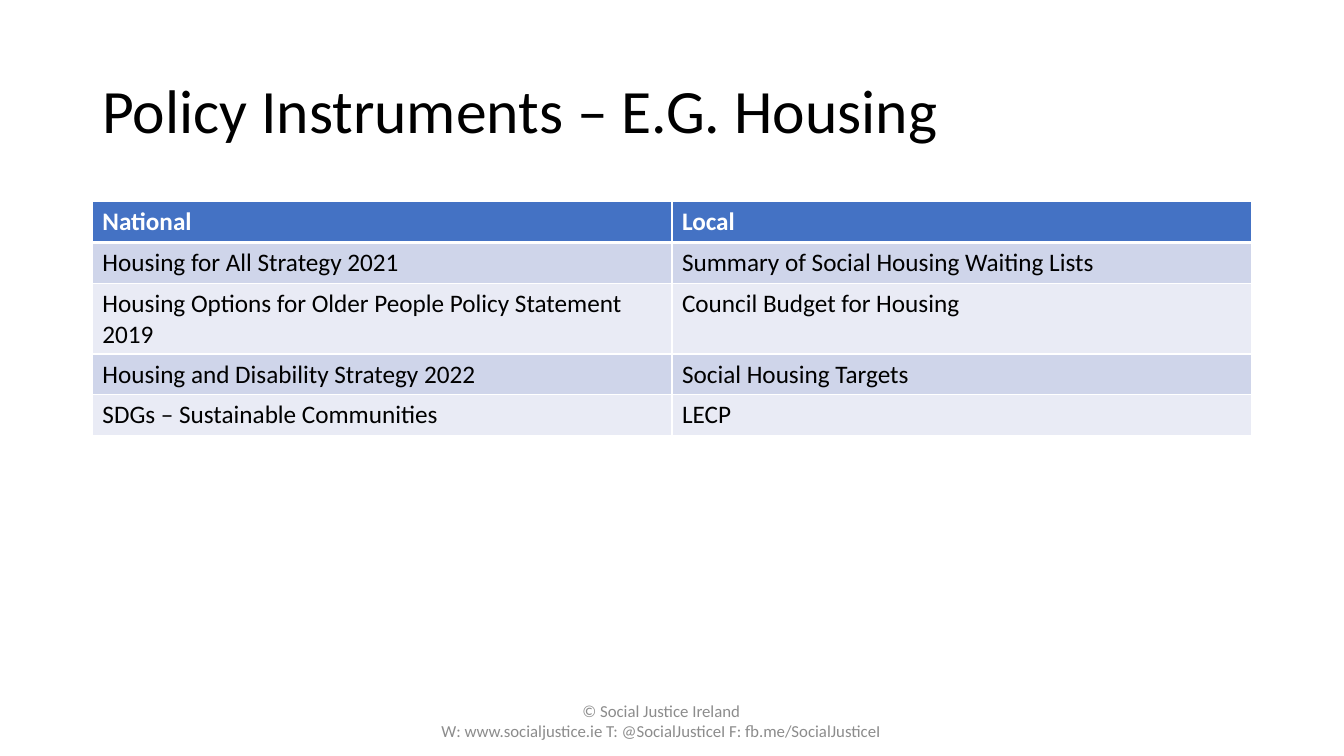
from lxml import etree
from pptx import Presentation
from pptx.dml.color import RGBColor
from pptx.enum.text import MSO_ANCHOR, PP_ALIGN
from pptx.oxml.ns import qn
from pptx.util import Pt

MIDDLE = MSO_ANCHOR.MIDDLE
LEFT, CENTER = PP_ALIGN.LEFT, PP_ALIGN.CENTER
FONT = "Calibri"
COLORS = {
    "text": "000000",
    "white": "FFFFFF",
    "header": "4472C4",
    "odd_row": "CFD5EA",
    "even_row": "E9EBF5",
    "footer": "8C8C8C",
}
INSTRUMENTS = [
    ("National", "Local"),
    ("Housing for All Strategy 2021", "Summary of Social Housing Waiting Lists"),
    ("Housing Options for Older People Policy Statement 2019", "Council Budget for Housing"),
    ("Housing and Disability Strategy 2022", "Social Housing Targets"),
    ("SDGs – Sustainable Communities", "LECP"),
]
CREDITS = [
    "© Social Justice Ireland",
    "W: www.socialjustice.ie T: @SocialJusticeI F: fb.me/SocialJusticeI",
]


def color(name):
    return RGBColor.from_string(COLORS[name])


def style(paragraph, size, color_name, bold=False):
    paragraph.font.name = FONT
    paragraph.font.size = Pt(size)
    paragraph.font.bold = bold
    paragraph.font.color.rgb = color(color_name)


def add_text(slide, box, lines, size, color_name, align, spacing):
    frame = slide.shapes.add_textbox(*map(Pt, box)).text_frame
    frame.word_wrap = True
    frame.vertical_anchor = MIDDLE
    frame.text = "\n".join(lines)
    for paragraph in frame.paragraphs:
        paragraph.alignment = align
        paragraph.line_spacing = spacing
        style(paragraph, size, color_name)


def add_borders(cell, widths):
    properties = cell._tc.get_or_add_tcPr()
    for position, (side, width) in enumerate(widths.items()):
        line = etree.Element(qn(f"a:{side}"), w=str(Pt(width)))
        fill = etree.SubElement(line, qn("a:solidFill"))
        etree.SubElement(fill, qn("a:srgbClr"), val=COLORS["white"])
        properties.insert(position, line)


def add_instruments(slide, box, row_height):
    left, top, width, height = box
    columns = len(INSTRUMENTS[0])
    table = slide.shapes.add_table(
        len(INSTRUMENTS), columns, Pt(left), Pt(top), Pt(width), Pt(height)
    ).table
    for column in table.columns:
        column.width = Pt(width / columns)
    for r, entries in enumerate(INSTRUMENTS):
        table.rows[r].height = Pt(row_height)
        is_header = r == 0
        fill_name = "header" if is_header else "odd_row" if r % 2 else "even_row"
        for c, entry in enumerate(entries):
            cell = table.cell(r, c)
            cell.text = entry
            cell.fill.solid()
            cell.fill.fore_color.rgb = color(fill_name)
            style(cell.text_frame.paragraphs[0], 18,
                  "white" if is_header else "text", is_header)
            add_borders(cell, {"lnL": 1, "lnR": 1,
                               "lnT": 3 if r == 1 else 1,
                               "lnB": 3 if is_header else 1})


def main():
    presentation = Presentation()
    presentation.slide_width, presentation.slide_height = Pt(960), Pt(540)
    slide = presentation.slides.add_slide(presentation.slide_layouts[6])
    add_text(slide, (66, 28.75, 828, 104.4), ["Policy Instruments – E.G. Housing"],
             44, "text", LEFT, 0.9)
    add_instruments(slide, (66, 144, 828, 146), 29.2)
    add_text(slide, (302.4, 500.5, 340, 28.75), CREDITS, 12, "footer", CENTER, 1)
    presentation.save("out.pptx")


if __name__ == "__main__":
    main()
